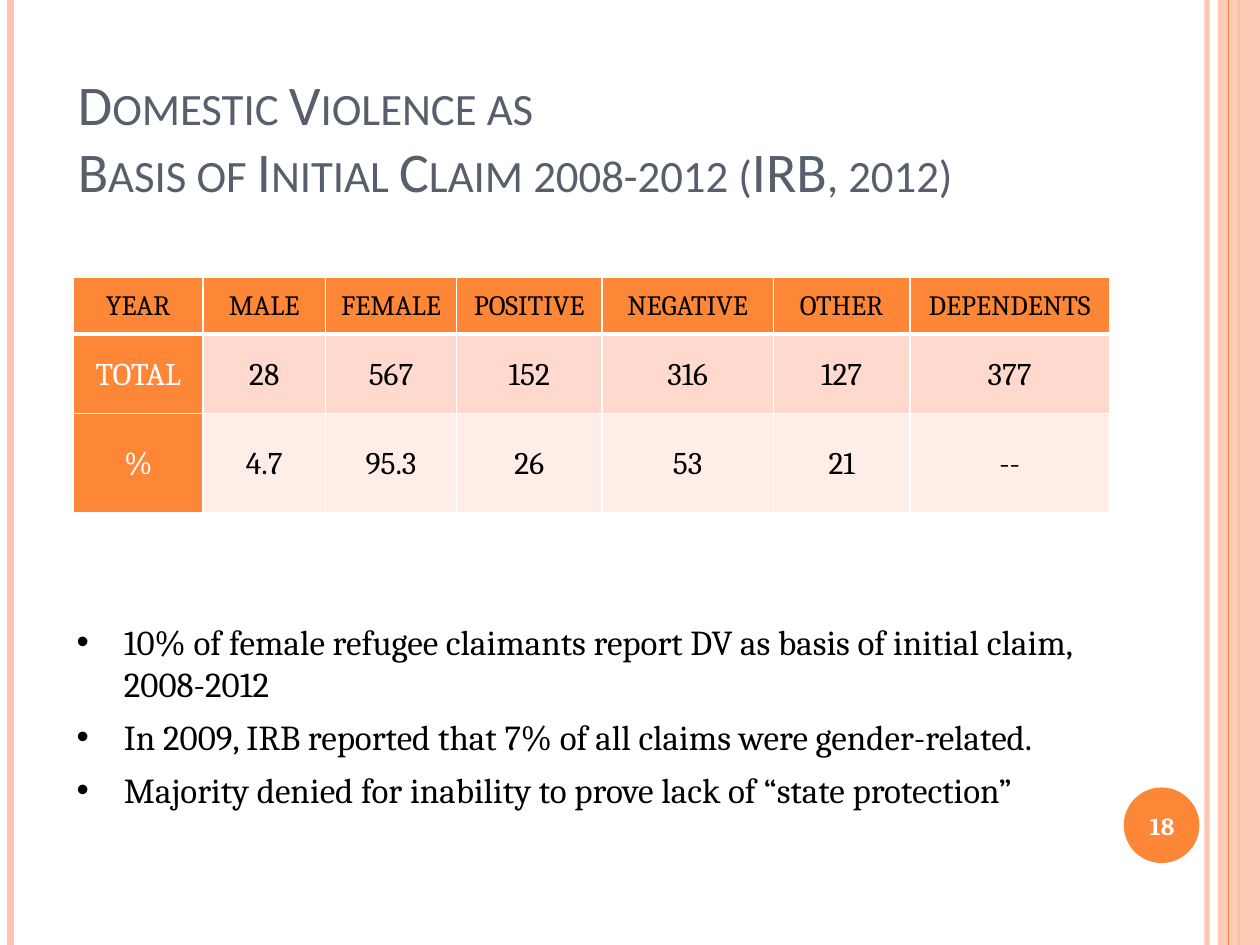
import pptx
import pptx.util
import pptx.dml.color
import pptx.enum.shapes
import pptx.enum.text
import pptx.oxml.ns
from lxml import etree

Pt = pptx.util.Pt
RGBColor = pptx.dml.color.RGBColor
Shape = pptx.enum.shapes.MSO_SHAPE
Align = pptx.enum.text.PP_ALIGN
Anchor = pptx.enum.text.MSO_ANCHOR
qn = pptx.oxml.ns.qn

ORANGE = RGBColor(0xFE, 0x86, 0x37)
PEACH = RGBColor(0xFE, 0xC3, 0xAE)
ROW_TINTS = [RGBColor(0xFF, 0xD9, 0xCE), RGBColor(0xFF, 0xED, 0xE8)]
SLATE = RGBColor(0x57, 0x5F, 0x6D)
BLACK = RGBColor(0, 0, 0)
WHITE = RGBColor(0xFF, 0xFF, 0xFF)

SLIDE_W, SLIDE_H = 720, 540
TITLE_LINES = ["Domestic Violence as", "Basis of Initial Claim 2008-2012 (IRB, 2012)"]
CLAIMS = [
    ["YEAR", "MALE", "FEMALE", "POSITIVE", "NEGATIVE", "OTHER", "DEPENDENTS"],
    ["TOTAL", "28", "567", "152", "316", "127", "377"],
    ["%", "4.7", "95.3", "26", "53", "21", "--"],
]
COLUMN_WIDTHS = [74, 70, 75, 83, 98, 78, 114]
ROW_HEIGHTS = [32.4, 45.4, 56.9]
FINDINGS = [
    "10% of female refugee claimants report DV as basis of initial claim, 2008-2012",
    "In 2009, IRB reported that 7% of all claims were gender-related.",
    "Majority denied for inability to prove lack of “state protection”",
]


def set_alpha(element, percent):
    color = element.find(".//" + qn("a:srgbClr"))
    etree.SubElement(color, qn("a:alpha"), val=str(percent * 1000))


def add_stripe(slide, x, color, width, alpha=None):
    stripe = slide.shapes.add_connector(
        pptx.enum.shapes.MSO_CONNECTOR.STRAIGHT, Pt(x), Pt(0), Pt(x), Pt(SLIDE_H))
    stripe.line.color.rgb = color
    stripe.line.width = Pt(width)
    if alpha:
        set_alpha(stripe.line._get_or_add_ln(), alpha)
    etree.SubElement(stripe._element.spPr, qn("a:effectLst"))


def add_block(slide, kind, left, top, width, height, color, alpha=None):
    block = slide.shapes.add_shape(kind, Pt(left), Pt(top), Pt(width), Pt(height))
    block.shadow.inherit = False
    block.fill.solid()
    block.fill.fore_color.rgb = color
    block.line.fill.background()
    if alpha:
        set_alpha(block._element.spPr.find(qn("a:solidFill")), alpha)


def add_frame(slide, left, top, width, height, anchor):
    frame = slide.shapes.add_textbox(Pt(left), Pt(top), Pt(width), Pt(height)).text_frame
    frame.word_wrap = True
    frame.vertical_anchor = anchor
    return frame


def add_run(paragraph, text, size, font, color, bold=False):
    run = paragraph.add_run()
    run.text = text
    run.font.size = Pt(size)
    run.font.name = font
    run.font.color.rgb = color
    run.font.bold = bold
    return run


def next_paragraph(frame, index):
    return frame.add_paragraph() if index else frame.paragraphs[0]


def add_title(slide):
    frame = add_frame(slide, 37.4, 48.2, 645.8, 72, Anchor.BOTTOM)
    for index, text in enumerate(TITLE_LINES):
        run = add_run(next_paragraph(frame, index), text, 32, "Calibri", SLATE)
        run.font._element.set("cap", "small")


def set_borders(cell, bottom_width):
    properties = cell._tc.get_or_add_tcPr()
    for side, width in (("L", 1), ("R", 1), ("T", 1), ("B", bottom_width)):
        line = etree.SubElement(properties, qn("a:ln" + side), w=str(int(Pt(width))))
        fill = etree.SubElement(line, qn("a:solidFill"))
        etree.SubElement(fill, qn("a:srgbClr"), val=str(WHITE))


def fill_cell(cell, text, row, column):
    is_header = row == 0
    set_borders(cell, 3 if is_header else 1)
    cell.fill.solid()
    cell.fill.fore_color.rgb = ORANGE if is_header or column == 0 else ROW_TINTS[row - 1]
    cell.vertical_anchor = Anchor.MIDDLE
    cell.margin_left = cell.margin_right = Pt(5)
    cell.margin_top = cell.margin_bottom = Pt(0)
    paragraph = cell.text_frame.paragraphs[0]
    paragraph.alignment = Align.CENTER
    paragraph.line_spacing = 1.07
    color = WHITE if column == 0 and not is_header else BLACK
    add_run(paragraph, text, 16 if is_header else 18, "Cambria", color)


def add_claims_table(slide):
    table = slide.shapes.add_table(
        len(CLAIMS), len(COLUMN_WIDTHS), Pt(42), Pt(158.4),
        Pt(sum(COLUMN_WIDTHS)), Pt(sum(ROW_HEIGHTS))).table
    for column, width in zip(table.columns, COLUMN_WIDTHS):
        column.width = Pt(width)
    for row, height in zip(table.rows, ROW_HEIGHTS):
        row.height = Pt(height)
    for r, values in enumerate(CLAIMS):
        for c, text in enumerate(values):
            fill_cell(table.cell(r, c), text, r, c)


def add_findings(slide):
    frame = add_frame(slide, 36.7, 329.8, 596.9, 138.2, Anchor.TOP)
    frame.margin_top = Pt(25)
    for index, text in enumerate(FINDINGS):
        paragraph = next_paragraph(frame, index)
        paragraph.space_after = Pt(6)
        properties = paragraph._p.get_or_add_pPr()
        properties.set("marL", str(int(Pt(27))))
        properties.set("indent", str(int(Pt(-27))))
        etree.SubElement(properties, qn("a:buFont"), typeface="Arial")
        etree.SubElement(properties, qn("a:buChar"), char="•")
        add_run(paragraph, text, 20, "Cambria", BLACK)


def add_page_number(slide):
    paragraph = add_frame(slide, 640, 451.4, 48.2, 41, Anchor.MIDDLE).paragraphs[0]
    paragraph.alignment = Align.CENTER
    add_run(paragraph, "18", 14, "Cambria", WHITE, bold=True)


def main():
    deck = pptx.Presentation()
    deck.slide_width, deck.slide_height = Pt(SLIDE_W), Pt(SLIDE_H)
    slide = deck.slides.add_slide(deck.slide_layouts[6])

    # Edge stripes and page number disc
    add_stripe(slide, 689.8, PEACH, 3, alpha=93)
    add_stripe(slide, 6, PEACH, 4.5)
    add_stripe(slide, 708, ORANGE, 1.5)
    add_block(slide, Shape.RECTANGLE, 696, 0, 24, SLIDE_H, PEACH, alpha=87)
    add_stripe(slide, 702, ORANGE, 0.75)
    add_block(slide, Shape.OVAL, 642.2, 450, 43.2, 43.2, ORANGE)

    # Content
    add_title(slide)
    add_claims_table(slide)
    add_findings(slide)
    add_page_number(slide)

    deck.save("out.pptx")


if __name__ == "__main__":
    main()
